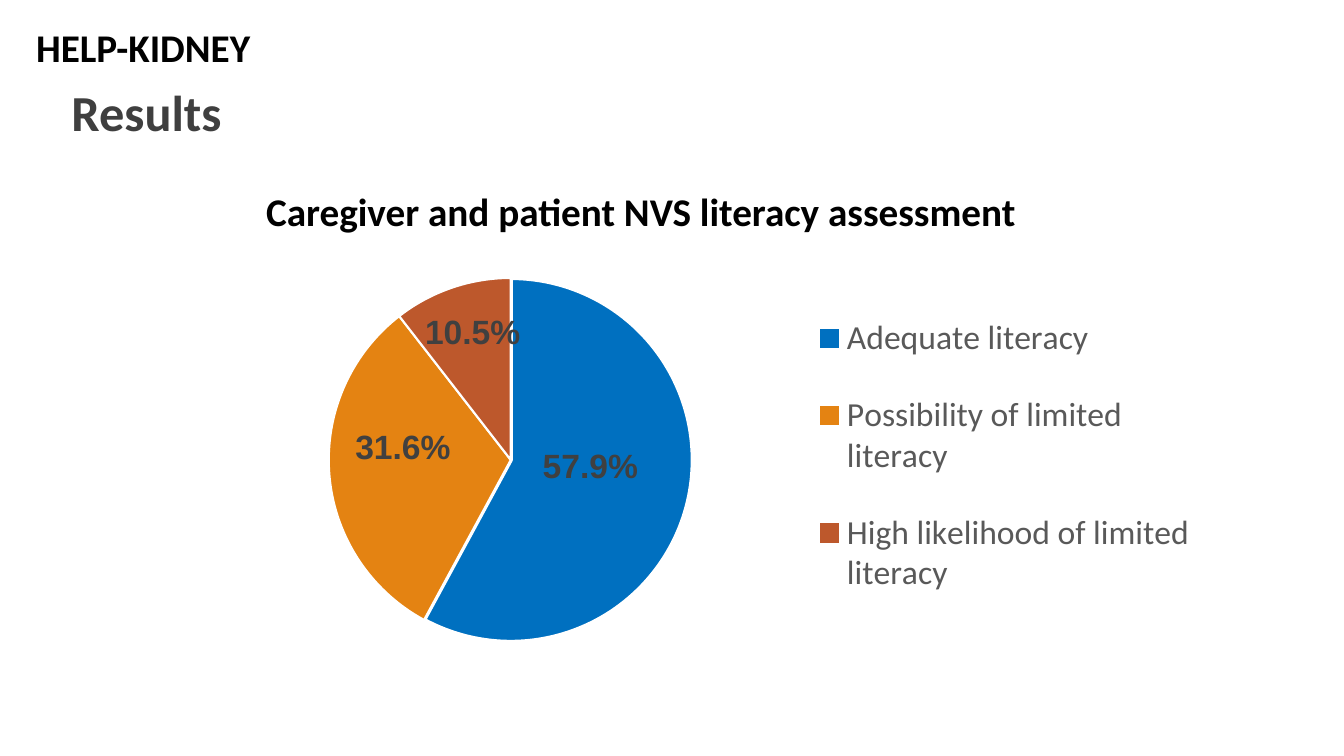
from lxml.etree import SubElement
from pptx import Presentation
from pptx.chart.data import CategoryChartData
from pptx.dml.color import RGBColor
from pptx.enum.chart import XL_CHART_TYPE, XL_LABEL_POSITION, XL_LEGEND_POSITION
from pptx.enum.text import MSO_ANCHOR
from pptx.oxml.ns import qn
from pptx.util import Pt

COLORS = {
    "black": "000000",
    "title": "3F3F3F",
    "label": "404040",
    "legend": "595959",
    "border": "FFFFFF",
}
SLICES = [
    ("Adequate literacy", 0.579, "0070C0", 3, (-0.008, -0.033)),
    ("Possibility of limited literacy", 0.316, "E48312", 1.5, (-0.016, -0.044)),
    ("High likelihood of limited literacy", 0.105, "BD582C", 1.5, (-0.008, -0.09)),
]


def set_font(font, name, size, color, bold=False):
    font.name = name
    font.size = Pt(size)
    font.bold = bold
    font.color.rgb = RGBColor.from_string(color)


def set_layout(parent, position, **values):
    for old in parent.findall(qn("c:layout")):
        parent.remove(old)
    layout = parent.makeelement(qn("c:layout"))
    parent.insert(position, layout)
    manual = SubElement(layout, qn("c:manualLayout"))
    for tag, value in values.items():
        SubElement(manual, qn(f"c:{tag}")).set("val", str(value))


def add_heading(page, box, text, size, color, anchor=MSO_ANCHOR.TOP, spacing=1.0):
    shape = page.shapes.add_textbox(*(Pt(length) for length in box))
    frame = shape.text_frame
    frame.word_wrap = True
    frame.vertical_anchor = anchor
    para = frame.paragraphs[0]
    para.text = text
    para.line_spacing = spacing
    set_font(para.font, "Calibri", size, color, True)


def add_literacy_pie(page, box):
    data = CategoryChartData(number_format="0.0%")
    data.categories = [name for name, *_ in SLICES]
    data.add_series("Series 1", [share for _, share, *_ in SLICES])
    chart = page.shapes.add_chart(
        XL_CHART_TYPE.PIE, *(Pt(length) for length in box), data
    ).chart
    chart.has_title = False
    set_font(chart.font, "Arial", 10, COLORS["black"])

    plot = chart.plots[0]
    plot.vary_by_categories = True
    plot.has_data_labels = True
    labels = plot.data_labels
    labels.show_value = True
    labels.show_percentage = False
    labels.number_format = "0.0%"
    labels.number_format_is_linked = False
    set_font(labels.font, "Arial", 24, COLORS["label"], True)

    series = plot.series[0]
    for index, (_, _, color, border, (shift_x, shift_y)) in enumerate(SLICES):
        point = series.points[index]
        point.format.fill.solid()
        point.format.fill.fore_color.rgb = RGBColor.from_string(color)
        point.format.line.color.rgb = RGBColor.from_string(COLORS["border"])
        point.format.line.width = Pt(border)
        set_font(point.data_label.font, "Arial", 24, COLORS["label"], True)
        point.data_label.position = XL_LABEL_POSITION.CENTER
    for label, (*_, (shift_x, shift_y)) in zip(series.data_labels._element.findall(qn("c:dLbl")), SLICES):
        set_layout(label, 1, x=shift_x, y=shift_y)
    series.data_labels.show_value = True
    series.data_labels.number_format = "0.0%"
    series.data_labels.number_format_is_linked = False

    chart.has_legend = True
    legend = chart.legend
    legend.position = XL_LEGEND_POSITION.RIGHT
    legend.include_in_layout = False
    set_font(legend.font, "Calibri", 24, COLORS["legend"])
    set_layout(legend._element, 1, xMode="edge", yMode="edge",
               x=0.58, y=0.11, w=0.37, h=0.77)
    plot_area = chart._chartSpace.chart.plotArea
    set_layout(plot_area, 0, layoutTarget="inner", xMode="edge", yMode="edge",
               x=0.063, y=0.1, w=0.483, h=0.806)


def build_results_slide(deck):
    page = deck.slides.add_slide(deck.slide_layouts[6])
    add_heading(page, (44, 57, 761, 47.5), "Results", 36, COLORS["title"],
                MSO_ANCHOR.BOTTOM, 0.85)
    add_literacy_pie(page, (131.8, 166.3, 765.4, 322.6))
    add_heading(page, (183, 130.3, 646.5, 41),
                "Caregiver and patient NVS literacy assessment", 28, COLORS["black"])
    add_heading(page, (18.7, 13, 317, 41), "HELP-KIDNEY", 28, COLORS["black"])


def main():
    deck = Presentation()
    deck.slide_width = Pt(960)
    deck.slide_height = Pt(540)
    build_results_slide(deck)
    deck.save("out.pptx")


if __name__ == "__main__":
    main()
